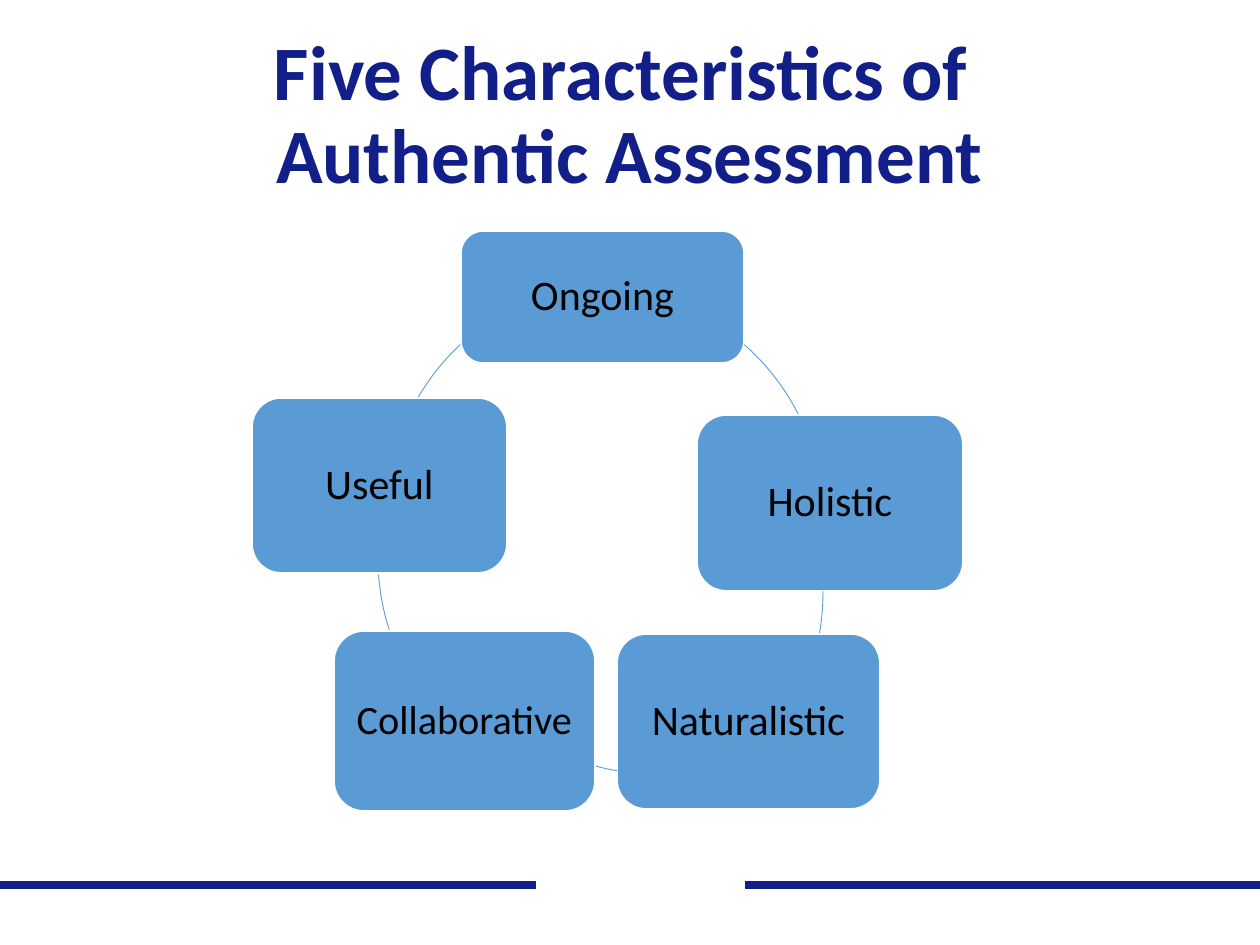
from math import atan2, degrees
from pptx import Presentation
from pptx.dml.color import RGBColor
from pptx.enum.shapes import MSO_CONNECTOR, MSO_SHAPE
from pptx.enum.text import MSO_ANCHOR, PP_ALIGN
from pptx.oxml.ns import qn
from pptx.util import Pt
from lxml.etree import SubElement

TITLE = "Five Characteristics of \vAuthentic Assessment"
NAVY, BLUE, WHITE, BLACK = "121F88", "5B9BD5", "FFFFFF", "000000"
RULES = [(0, 1260, NAVY), (536, 745, WHITE)]
NODES = [
    ("Ongoing", 24, (461, 231, 283, 132)),
    ("Holistic", 24, (697, 415, 266, 176)),
    ("Naturalistic", 24, (617, 634, 263, 175)),
    ("Collaborative", 23, (334, 631, 261, 180)),
    ("Useful", 24, (252, 398, 255, 175)),
]
DIAM = 470
ARCS = [
    ((354, 286), (745, 344), (799, 415)),
    ((353, 358), (823, 591), (819, 634)),
    ((421, 304), (617, 771), (595, 766)),
    ((378, 323), (389, 630), (378, 575)),
    ((386, 281), (418, 397), (460, 344)),
]


def px(n):
    return round(n * 914400 / 126)


def paint(fmt, tone):
    fmt.solid()
    fmt.fore_color.rgb = RGBColor.from_string(tone)


def stroke(line, tone, width):
    paint(line.fill, tone)
    line.width = Pt(width)


def write(frame, text, size, tone, bold=False):
    frame.text = text
    frame.word_wrap = True
    frame.vertical_anchor = MSO_ANCHOR.MIDDLE
    para = frame.paragraphs[0]
    para.alignment = PP_ALIGN.CENTER
    para.line_spacing = 0.9
    for run in para.runs:
        run.font.name = "Calibri"
        run.font.size = Pt(size)
        run.font.bold = bold
        run.font.color.rgb = RGBColor.from_string(tone)


def add(kind, box):
    shape = slide.shapes.add_shape(kind, *map(px, box))
    shape.shadow.inherit = False
    return shape


def angle(mid, point):
    return degrees(atan2(point[1] - mid[1], point[0] - mid[0])) % 360


deck = Presentation()
deck.slide_width, deck.slide_height = px(1260), px(945)
slide = deck.slides.add_slide(deck.slide_layouts[6])

for left, right, tone in RULES:
    rule = slide.shapes.add_connector(
        MSO_CONNECTOR.STRAIGHT, px(left), px(885), px(right), px(885))
    stroke(rule.line, tone, 4.5)
    SubElement(rule._element.spPr, qn("a:effectLst"))

title = slide.shapes.add_textbox(px(87), px(18), px(1086), px(198))
write(title.text_frame, TITLE, 44, NAVY, True)

for (text, size, box), (spot, start, end) in zip(NODES, ARCS):
    node = add(MSO_SHAPE.ROUNDED_RECTANGLE, box)
    paint(node.fill, BLUE)
    stroke(node.line, WHITE, 1)
    frame = node.text_frame
    frame.margin_left = frame.margin_right = px(6)
    write(frame, text, size, BLACK)

    arc = add(MSO_SHAPE.ARC, (*spot, DIAM, DIAM))
    arc.fill.background()
    stroke(arc.line, BLUE, 0.5)
    mid = [n + DIAM / 2 for n in spot]
    for i, point in enumerate((start, end)):
        arc.adjustments[i] = angle(mid, point) * 0.6

deck.save("out.pptx")
